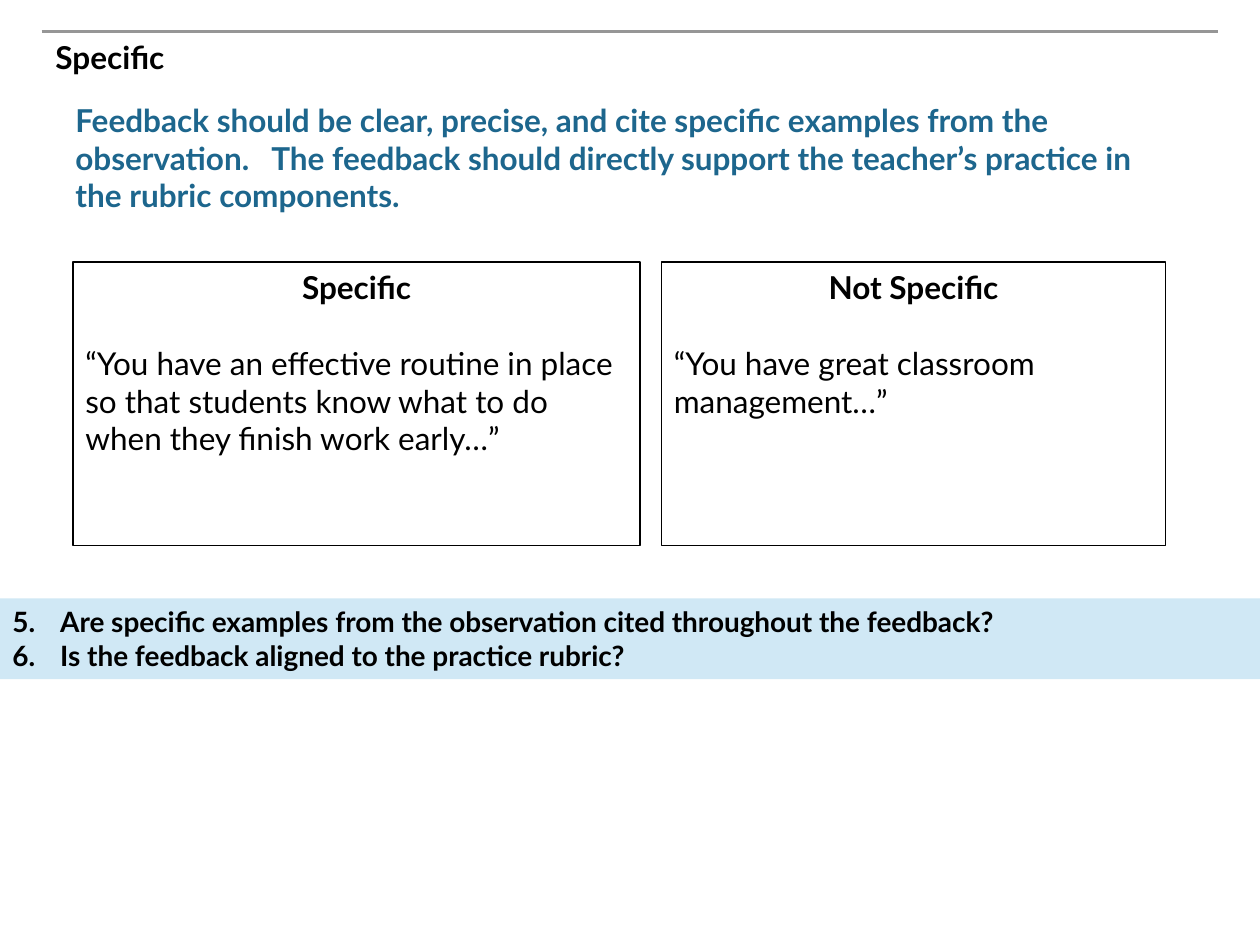
"""Builds the slide on specific feedback."""
from lxml import etree
from pptx import Presentation, util as u
from pptx.dml.color import RGBColor
from pptx.enum import shapes, text
from pptx.oxml.ns import qn

HUES = {"rule": "969696", "ink": "000000", "lead": "1D668D",
        "card": "FFFFFF", "band": "D0E8F5"}
TITLE = "Specific"
LEAD = ("Feedback should be clear, precise, and cite specific examples from the "
        "observation.   The feedback should directly support the teacher’s "
        "practice in the rubric components.")
CARDS = [
    (0.58, 4.5, "Specific", "“You have an effective routine in place so that "
     "students know what to do when they finish work early…”"),
    (5.25, 4, "Not Specific", "“You have great classroom management…”"),
]
CHECKS = ["Are specific examples from the observation cited throughout the feedback?",
          "Is the feedback aligned to the practice rubric?"]
START = 5


def hue(name):
    return RGBColor.from_string(HUES[name])


def place(shape, *box):
    shape.left, shape.top, shape.width, shape.height = map(u.Inches, box)


def write(shape, lines, size=18, ink="ink", bold=True):
    frame = shape.text_frame
    frame.text = "\n".join(lines)
    frame.word_wrap = True
    frame.auto_size = text.MSO_AUTO_SIZE.NONE
    frame.vertical_anchor = text.MSO_ANCHOR.TOP
    for para in frame.paragraphs:
        para.alignment = text.PP_ALIGN.LEFT
        para.line_spacing = 1
        for run in para.runs:
            font = run.font
            font.name, font.size, font.bold = "Lato", u.Pt(size), bold
            font.color.rgb = hue(ink)
    return frame.paragraphs


def block(slide, box, fill, line=None):
    shape = slide.shapes.add_shape(shapes.MSO_SHAPE.RECTANGLE, *map(u.Inches, box))
    shape.shadow.inherit = False
    shape.fill.solid()
    shape.fill.fore_color.rgb = hue(fill)
    if line:
        shape.line.color.rgb = hue(line)
        shape.line.width = u.Pt(0.75)
    else:
        shape.line.fill.background()
    return shape


def number(para, start):
    props = para._p.get_or_add_pPr()
    props.set("marL", str(u.Inches(0.38)))
    props.set("indent", str(-u.Inches(0.38)))
    etree.SubElement(props, qn("a:buFont"), typeface="+mj-lt")
    etree.SubElement(props, qn("a:buAutoNum"), type="arabicPeriod", startAt=str(start))


def main():
    deck = Presentation()
    deck.slide_width, deck.slide_height = u.Inches(10), u.Inches(7.5)
    slide = deck.slides.add_slide(deck.slide_layouts[5])

    rule = slide.shapes.add_connector(
        shapes.MSO_CONNECTOR.STRAIGHT, *map(u.Inches, (0.33, 0.25, 9.67, 0.25)))
    rule.line.color.rgb = hue("rule")
    rule.line.width = u.Pt(2)
    etree.SubElement(rule._element.spPr, qn("a:effectLst"))

    title = slide.shapes.title
    place(title, 0.34, 0.25, 9.32, 0.92)
    write(title, [TITLE])

    lead = slide.shapes.add_textbox(*map(u.Inches, (0.5, 0.75, 9, 1.31)))
    write(lead, [LEAD], ink="lead")

    for left, width, head, quote in CARDS:
        card = block(slide, (left, 2.08, width, 2.25), "card", "ink")
        top, body = write(card, [head, quote])
        top.alignment = text.PP_ALIGN.CENTER
        body.space_before = u.Pt(21.6)
        body.runs[0].font.bold = False

    band = block(slide, (0, 4.75, 10, 0.64), "band")
    for para in write(band, CHECKS, size=16):
        number(para, START)

    deck.save("out.pptx")


if __name__ == "__main__":
    main()
